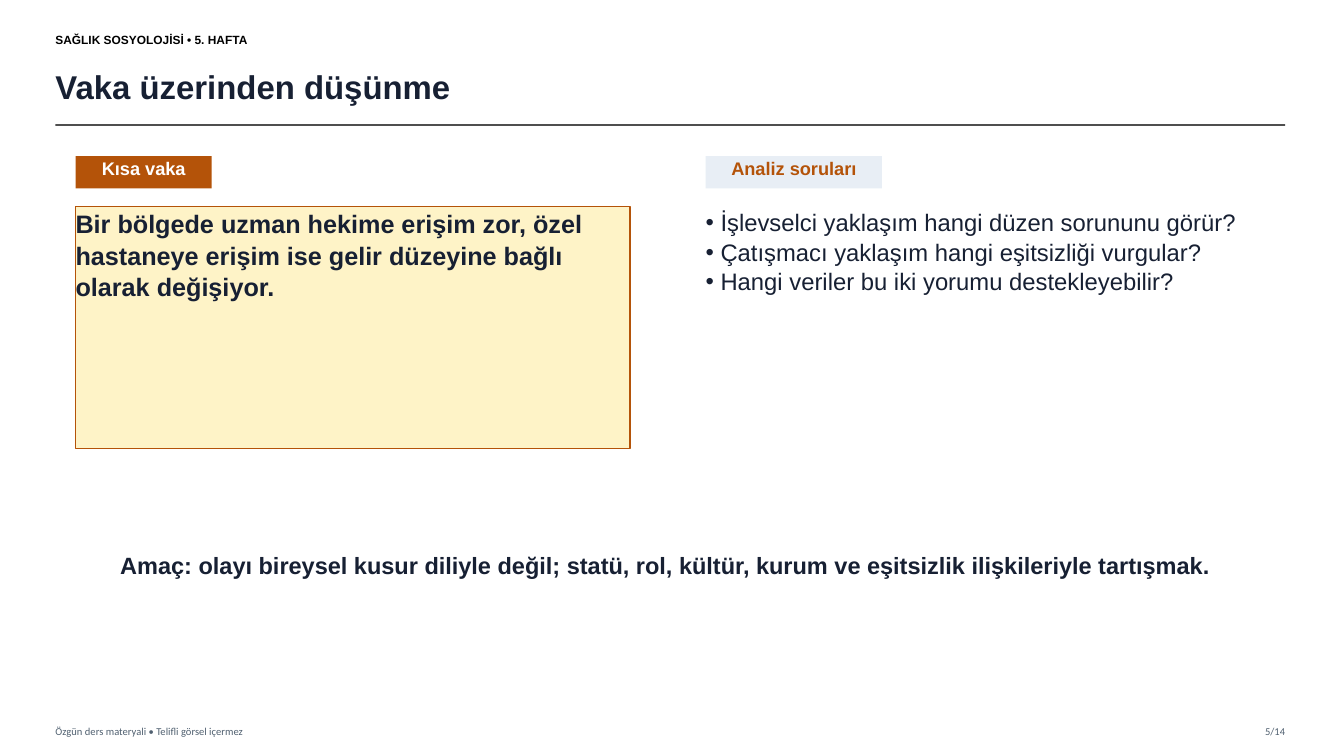
"""Builds the case discussion slide of a health sociology lecture."""
from lxml import etree
from pptx import Presentation
from pptx.dml.color import RGBColor
from pptx.enum.shapes import MSO_CONNECTOR, MSO_SHAPE
from pptx.enum.text import MSO_ANCHOR, PP_ALIGN
from pptx.oxml.ns import qn
from pptx.util import Pt

LEFT, CENTER, RIGHT = PP_ALIGN.LEFT, PP_ALIGN.CENTER, PP_ALIGN.RIGHT
TOP, MIDDLE = MSO_ANCHOR.TOP, MSO_ANCHOR.MIDDLE
RECTANGLE, STRAIGHT = MSO_SHAPE.RECTANGLE, MSO_CONNECTOR.STRAIGHT

BLACK = RGBColor(0x00, 0x00, 0x00)
WHITE = RGBColor(0xFF, 0xFF, 0xFF)
INK = RGBColor(0x17, 0x20, 0x33)
RULE = RGBColor(0x33, 0x33, 0x33)
GREY = RGBColor(0x50, 0x60, 0x70)
RUST = RGBColor(0xB4, 0x53, 0x09)
CREAM = RGBColor(0xFE, 0xF3, 0xC7)
MIST = RGBColor(0xE8, 0xEE, 0xF5)

COURSE = "SAĞLIK SOSYOLOJİSİ • 5. HAFTA"
TITLE = "Vaka üzerinden düşünme"
CASE_LABEL = "Kısa vaka"
CASE = ("Bir bölgede uzman hekime erişim zor, özel hastaneye erişim ise "
        "gelir düzeyine bağlı olarak değişiyor.")
QUESTIONS_LABEL = "Analiz soruları"
QUESTIONS = [
    "İşlevselci yaklaşım hangi düzen sorununu görür?",
    "Çatışmacı yaklaşım hangi eşitsizliği vurgular?",
    "Hangi veriler bu iki yorumu destekleyebilir?",
]
AIM = ("Amaç: olayı bireysel kusur diliyle değil; statü, rol, kültür, kurum "
       "ve eşitsizlik ilişkileriyle tartışmak.")
FOOTER = "Özgün ders materyali • Telifli görsel içermez"
PAGE = "5/14"

WIDTH, HEIGHT = 960, 540
MARGIN, RIGHT_EDGE = 39.6, 918
RULE_Y = 89.28
CASE_X, QUESTIONS_X = 54, 504
LABEL_Y, LABEL_HEIGHT = 111.6, 23.04
BODY_Y = 147.6
FOOTER_Y, FOOTER_HEIGHT = 514.08, 15.84
PAGE_WIDTH = 46.8
AIM_WIDTH = 799.2
BULLET_INDENT = 10.7


def add_bullet(paragraph):
    properties = paragraph._p.get_or_add_pPr()
    indent = Pt(BULLET_INDENT)
    properties.set("marL", str(indent))
    properties.set("indent", str(-indent))
    etree.SubElement(properties, qn("a:buFont")).set("typeface", "Arial")
    etree.SubElement(properties, qn("a:buChar")).set("char", "•")


def add_text(slide, text, left, top, width, height, *, size, color=INK,
             font="Arial", bold=False, align=LEFT, anchor=TOP, spacing=None,
             fill=None, outline=None, bullets=False):
    area = [Pt(value) for value in (left, top, width, height)]
    if fill is None:
        box = slide.shapes.add_textbox(*area)
    else:
        box = slide.shapes.add_shape(RECTANGLE, *area)
        box.shadow.inherit = False
        box.fill.solid()
        box.fill.fore_color.rgb = fill
        if outline is None:
            box.line.fill.background()
        else:
            box.line.color.rgb = outline
            box.line.width = Pt(1)
    frame = box.text_frame
    frame.word_wrap = True
    frame.vertical_anchor = anchor
    frame.margin_left = frame.margin_right = 0
    frame.margin_top = frame.margin_bottom = 0
    lines = [text] if isinstance(text, str) else text
    for index, line in enumerate(lines):
        paragraph = frame.add_paragraph() if index else frame.paragraphs[0]
        paragraph.alignment = align
        if spacing:
            paragraph.line_spacing = spacing
        if bullets:
            add_bullet(paragraph)
        run = paragraph.add_run()
        run.text = line
        run.font.name = font
        run.font.size = Pt(size)
        run.font.bold = bold
        run.font.color.rgb = color


def add_title_rule(slide):
    rule = slide.shapes.add_connector(
        STRAIGHT, Pt(MARGIN), Pt(RULE_Y), Pt(RIGHT_EDGE), Pt(RULE_Y))
    rule.line.color.rgb = RULE
    rule.line.width = Pt(1.2)
    color = rule._element.spPr.find(".//" + qn("a:srgbClr"))
    etree.SubElement(color, qn("a:alpha")).set("val", "85000")
    etree.SubElement(rule._element.spPr, qn("a:effectLst"))


def main():
    deck = Presentation()
    deck.slide_width, deck.slide_height = Pt(WIDTH), Pt(HEIGHT)
    slide = deck.slides.add_slide(deck.slide_layouts[6])
    slide.background.fill.solid()
    slide.background.fill.fore_color.rgb = WHITE

    add_text(slide, COURSE, MARGIN, 18, 259.2, 20.16,
             size=8.5, color=BLACK, bold=True, anchor=MIDDLE)
    add_text(slide, TITLE, MARGIN, 41.76, 860.4, 39.6,
             size=23.5, bold=True, anchor=MIDDLE)
    add_title_rule(slide)

    footer = dict(size=7.5, color=GREY, font="Calibri", anchor=MIDDLE)
    add_text(slide, FOOTER, MARGIN, FOOTER_Y, 432, FOOTER_HEIGHT, **footer)
    add_text(slide, PAGE, RIGHT_EDGE - PAGE_WIDTH, FOOTER_Y, PAGE_WIDTH,
             FOOTER_HEIGHT, align=RIGHT, **footer)

    label = dict(size=13, bold=True, align=CENTER, spacing=1.05)
    add_text(slide, CASE_LABEL, CASE_X, LABEL_Y, 97.2, LABEL_HEIGHT,
             color=WHITE, fill=RUST, **label)
    add_text(slide, CASE, CASE_X, BODY_Y, 396, 172.8,
             size=18, bold=True, spacing=1.05, fill=CREAM, outline=RUST)
    add_text(slide, QUESTIONS_LABEL, QUESTIONS_X, LABEL_Y, 126, LABEL_HEIGHT,
             color=RUST, fill=MIST, **label)
    add_text(slide, QUESTIONS, QUESTIONS_X, BODY_Y, 388.8, 190.8,
             size=17, spacing=1.04, bullets=True)
    add_text(slide, AIM, 75.6, 392.4, AIM_WIDTH, 43.2,
             size=16.8, bold=True, align=CENTER, spacing=1.05)

    deck.save("out.pptx")


if __name__ == "__main__":
    main()
